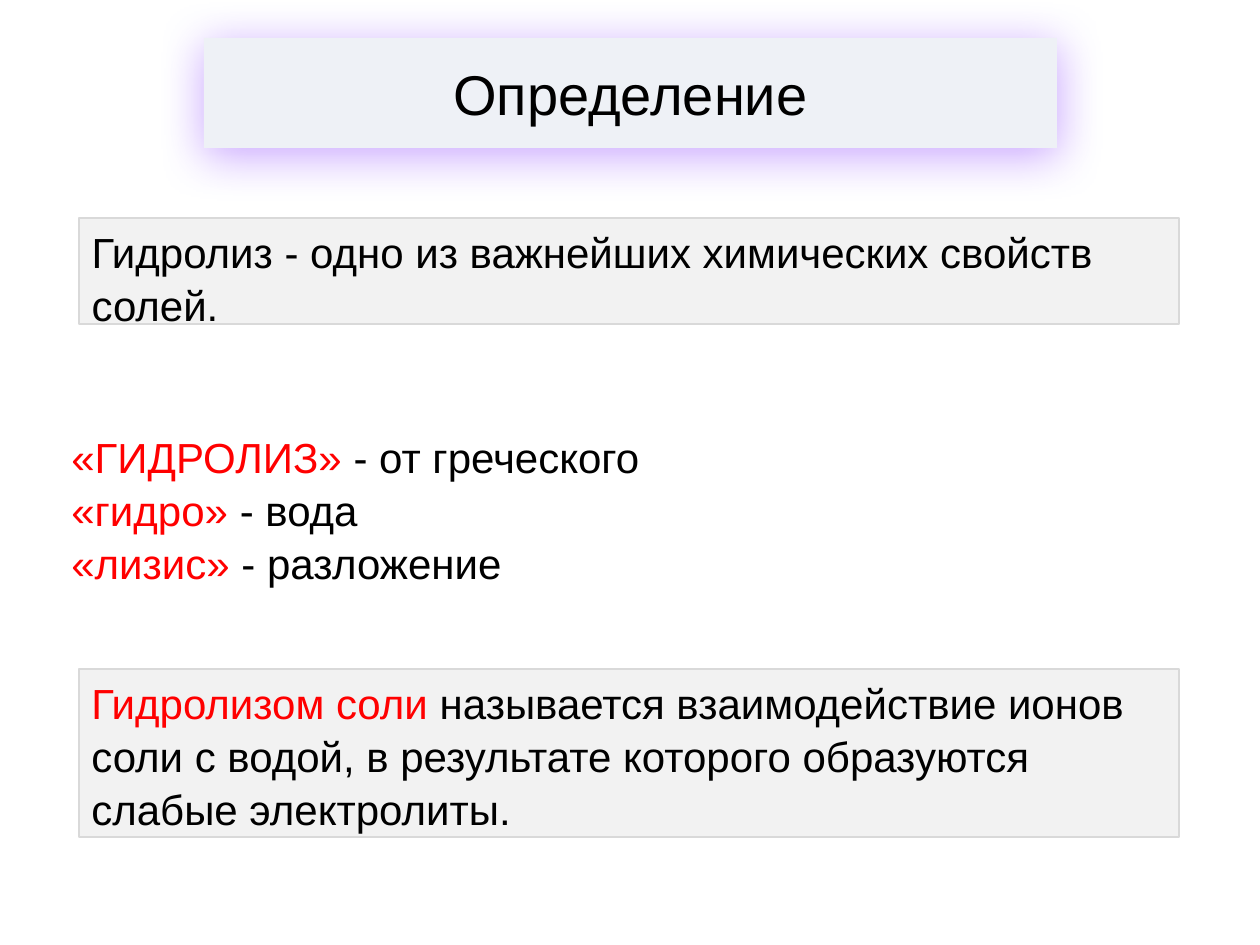
import pptx
import pptx.dml.color
import pptx.enum.shapes
import pptx.enum.text
import pptx.oxml
import pptx.oxml.ns
import pptx.util

PX = 914400 // 126
BLACK, RED = "000000", "FF0000"
PANEL, PANEL_LINE = "F2F2F2", "D9D9D9"
TITLE_FILL, TITLE_GLOW = "EEF1F6", "6600FF"


def color(hex_value):
    return pptx.dml.color.RGBColor.from_string(hex_value)


class DefinitionSlide:
    font = "Arial"
    text_size = 24
    title_size = 32
    frame_format = {
        "word_wrap": True,
        "auto_size": pptx.enum.text.MSO_AUTO_SIZE.NONE,
        "vertical_anchor": pptx.enum.text.MSO_ANCHOR.TOP,
    }
    paragraph_format = {
        "alignment": pptx.enum.text.PP_ALIGN.LEFT,
        "line_spacing": 1.05,
        "space_before": pptx.util.Pt(0),
    }

    def __init__(self, presentation):
        self.slide = presentation.slides.add_slide(presentation.slide_layouts[1])

    def apply(self, target, values):
        for name, value in values.items():
            setattr(target, name, value)

    def place(self, shape, left, top, width, height):
        box = {"left": left, "top": top, "width": width, "height": height}
        self.apply(shape, {side: px * PX for side, px in box.items()})

    def set_text(self, shape, paragraphs, size=text_size, frame=None, layout=None):
        """Each paragraph is a list of lines; each line is a list of (text, colour)."""
        text_frame = shape.text_frame
        self.apply(text_frame, {**self.frame_format, **(frame or {})})
        for index, lines in enumerate(paragraphs):
            paragraph = text_frame.add_paragraph() if index else text_frame.paragraphs[0]
            self.apply(paragraph, {**self.paragraph_format, **(layout or {})})
            for line_index, line in enumerate(lines):
                if line_index:
                    paragraph.add_line_break()
                for text, hex_value in line:
                    run = paragraph.add_run()
                    run.text = text
                    self.apply(run.font, {"name": self.font, "size": pptx.util.Pt(size)})
                    run.font.color.rgb = color(hex_value)

    def fill(self, shape, hex_value):
        shape.fill.solid()
        shape.fill.fore_color.rgb = color(hex_value)

    def outline(self, shape, hex_value):
        shape.line.color.rgb = color(hex_value)
        shape.line.width = pptx.util.Pt(0.75)

    def glow(self, shape, hex_value):
        shape._element.spPr.append(pptx.oxml.parse_xml(
            f'<a:effectLst {pptx.oxml.ns.nsdecls("a")}>'
            f'<a:outerShdw blurRad="{pptx.util.Pt(27)}" dist="{pptx.util.Pt(4)}" '
            f'dir="5400000" algn="ctr" rotWithShape="0"><a:srgbClr val="{hex_value}">'
            '<a:alpha val="35000"/></a:srgbClr></a:outerShdw></a:effectLst>'))

    def title(self, text, *box):
        heading = self.slide.shapes.title
        self.place(heading, *box)
        self.fill(heading, TITLE_FILL)
        self.glow(heading, TITLE_GLOW)
        self.set_text(heading, [[[(text, BLACK)]]], self.title_size,
                      {"vertical_anchor": pptx.enum.text.MSO_ANCHOR.MIDDLE},
                      {"alignment": pptx.enum.text.PP_ALIGN.CENTER, "line_spacing": 1.0})

    def body(self, text, *box):
        statement = self.slide.placeholders[1]
        self.place(statement, *box)
        self.fill(statement, PANEL)
        self.outline(statement, PANEL_LINE)
        self.set_text(statement, [[[(text, BLACK)]]])
        # Plain text: no bullet, no hanging indent
        properties = statement.text_frame.paragraphs[0]._p.get_or_add_pPr()
        properties.set("marL", "0")
        properties.set("indent", "0")
        properties.append(pptx.oxml.parse_xml(
            f'<a:buNone {pptx.oxml.ns.nsdecls("a")}/>'))

    def text(self, paragraphs, *box):
        note = self.slide.shapes.add_textbox(*(px * PX for px in box))
        self.set_text(note, paragraphs)

    def panel(self, paragraphs, *box):
        panel = self.slide.shapes.add_shape(
            pptx.enum.shapes.MSO_SHAPE.RECTANGLE, *(px * PX for px in box))
        panel.shadow.inherit = False
        self.fill(panel, PANEL)
        self.outline(panel, PANEL_LINE)
        self.set_text(panel, paragraphs)


def main():
    presentation = pptx.Presentation()
    presentation.slide_width = pptx.util.Inches(10)
    presentation.slide_height = pptx.util.Inches(7.5)
    definition = DefinitionSlide(presentation)

    # Heading and opening statement
    definition.title("Определение", 204, 38, 853, 110)
    definition.body("Гидролиз - одно из важнейших химических свойств солей.",
                    79, 218, 1100, 106)

    # Origin of the word
    definition.text([
        [[("«ГИДРОЛИЗ» ", RED), ("- от греческого", BLACK)]],
        [[("«гидро» ", RED), ("- вода", BLACK)],
         [("«лизис» ", RED), ("- разложение", BLACK)]],
    ], 59, 423, 1142, 165)

    # Definition
    definition.panel([[[
        ("Гидролизом соли ", RED),
        ("называется взаимодействие ионов соли с водой, "
         "в результате которого образуются слабые электролиты.", BLACK),
    ]]], 79, 669, 1100, 168)

    presentation.save("out.pptx")


if __name__ == "__main__":
    main()
